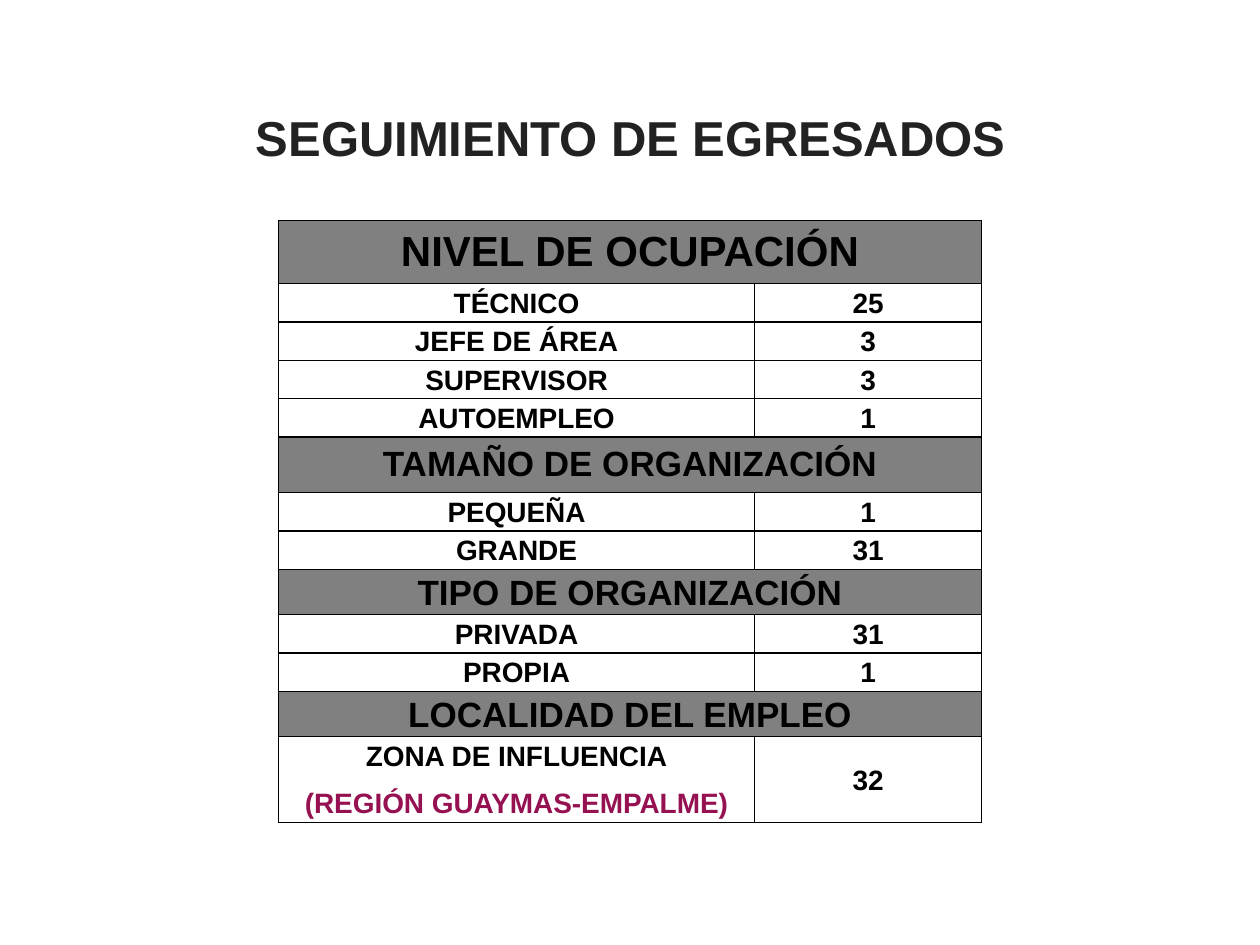
from dataclasses import dataclass

from lxml.etree import SubElement
from pptx import Presentation
from pptx.dml.color import RGBColor as RGB
from pptx.enum.text import MSO_ANCHOR, MSO_AUTO_SIZE, PP_ALIGN
from pptx.oxml.ns import qn
from pptx.util import Inches, Pt


@dataclass(frozen=True)
class Theme:
    font: str = "Arial"
    title: str = "222222"
    text: str = "000000"
    accent: str = "961151"
    band: str = "808080"
    plain: str = "FFFFFF"
    border: str = "000000"
    title_size: int = 28
    first_band_size: int = 24
    band_size: int = 20
    item_size: int = 16


@dataclass(frozen=True)
class Item:
    label: str
    value: int
    note: str = ""


@dataclass(frozen=True)
class Section:
    heading: str
    height: float
    size: int
    compact: bool
    items: tuple[Item, ...]


THEME = Theme()
ITEM_HEIGHT = 2.44 / 8  # eight single-line rows share this height
NOTED_HEIGHT = 0.68
COLUMNS = (3.78, 1.8)

SECTIONS = (
    Section("NIVEL DE OCUPACIÓN", 0.5, THEME.first_band_size, False, (
        Item("TÉCNICO", 25), Item("JEFE DE ÁREA", 3),
        Item("SUPERVISOR", 3), Item("AUTOEMPLEO", 1))),
    Section("TAMAÑO DE ORGANIZACIÓN", 0.44, THEME.band_size, False, (
        Item("PEQUEÑA", 1), Item("GRANDE", 31))),
    Section("TIPO DE ORGANIZACIÓN", 0.36, THEME.band_size, True, (
        Item("PRIVADA", 31), Item("PROPIA", 1))),
    Section("LOCALIDAD DEL EMPLEO", 0.36, THEME.band_size, True, (
        Item("ZONA DE INFLUENCIA", 32, "(REGIÓN GUAYMAS-EMPALME)"),)),
)


def style_paragraph(p, size: int, color: str) -> None:
    p.alignment = PP_ALIGN.CENTER
    for r in p.runs:
        r.font.name = THEME.font
        r.font.size = Pt(size)
        r.font.bold = True
        r.font.color.rgb = RGB.from_string(color)


def add_borders(cell) -> None:
    tc_pr = cell._tc.get_or_add_tcPr()
    for side in ("a:lnL", "a:lnR", "a:lnT", "a:lnB"):
        ln = SubElement(tc_pr, qn(side), w=str(Pt(1)))
        fill = SubElement(ln, qn("a:solidFill"))
        SubElement(fill, qn("a:srgbClr"), val=THEME.border)


def style_cell(cell, fill: str) -> None:
    add_borders(cell)
    cell.fill.solid()
    cell.fill.fore_color.rgb = RGB.from_string(fill)


def write_cell(cell, text: str, size: int, compact: bool = True,
               note: str = "") -> None:
    cell.vertical_anchor = MSO_ANCHOR.MIDDLE
    if compact:
        cell.margin_left = cell.margin_right = Inches(0.07)
        cell.margin_top = cell.margin_bottom = 0
    tf = cell.text_frame
    tf.text = text
    if note:
        tf.add_paragraph().text = note
    for p, color in zip(tf.paragraphs, (THEME.text, THEME.accent)):
        style_paragraph(p, size, color)
        if compact:
            p.line_spacing = 1.07
            p.space_after = Pt(8)


def add_title(s, text: str) -> None:
    sp = s.shapes.title
    sp.left, sp.top = Inches(1.9), Inches(0.8)
    sp.width, sp.height = Inches(6.21), Inches(0.57)
    tf = sp.text_frame
    tf.text = text
    tf.auto_size = MSO_AUTO_SIZE.NONE
    tf.vertical_anchor = MSO_ANCHOR.MIDDLE
    style_paragraph(tf.paragraphs[0], THEME.title_size, THEME.title)


def add_results_table(s, sections: tuple[Section, ...]) -> None:
    count = sum(1 + len(section.items) for section in sections)
    table = s.shapes.add_table(count, len(COLUMNS), Inches(2.21), Inches(1.75),
                               Inches(sum(COLUMNS)), Inches(4.78)).table
    table.first_row = table.horz_banding = False
    for column, width in zip(table.columns, COLUMNS):
        column.width = Inches(width)

    row = 0
    for section in sections:
        # Heading band across both columns
        table.rows[row].height = Inches(section.height)
        heading, covered = table.cell(row, 0), table.cell(row, 1)
        heading.merge(covered)
        style_cell(heading, THEME.band)
        style_cell(covered, THEME.band)
        write_cell(heading, section.heading, section.size, section.compact)
        row += 1

        # Label and count rows
        for item in section.items:
            height = NOTED_HEIGHT if item.note else ITEM_HEIGHT
            table.rows[row].height = Inches(height)
            label, value = table.cell(row, 0), table.cell(row, 1)
            style_cell(label, THEME.plain)
            style_cell(value, THEME.plain)
            write_cell(label, item.label, THEME.item_size, note=item.note)
            write_cell(value, str(item.value), THEME.item_size)
            row += 1


def main() -> None:
    prs = Presentation()
    prs.slide_width, prs.slide_height = Inches(10), Inches(7.5)
    s = prs.slides.add_slide(prs.slide_layouts[5])
    add_title(s, "SEGUIMIENTO DE EGRESADOS")
    add_results_table(s, SECTIONS)
    prs.save("out.pptx")


if __name__ == "__main__":
    main()
